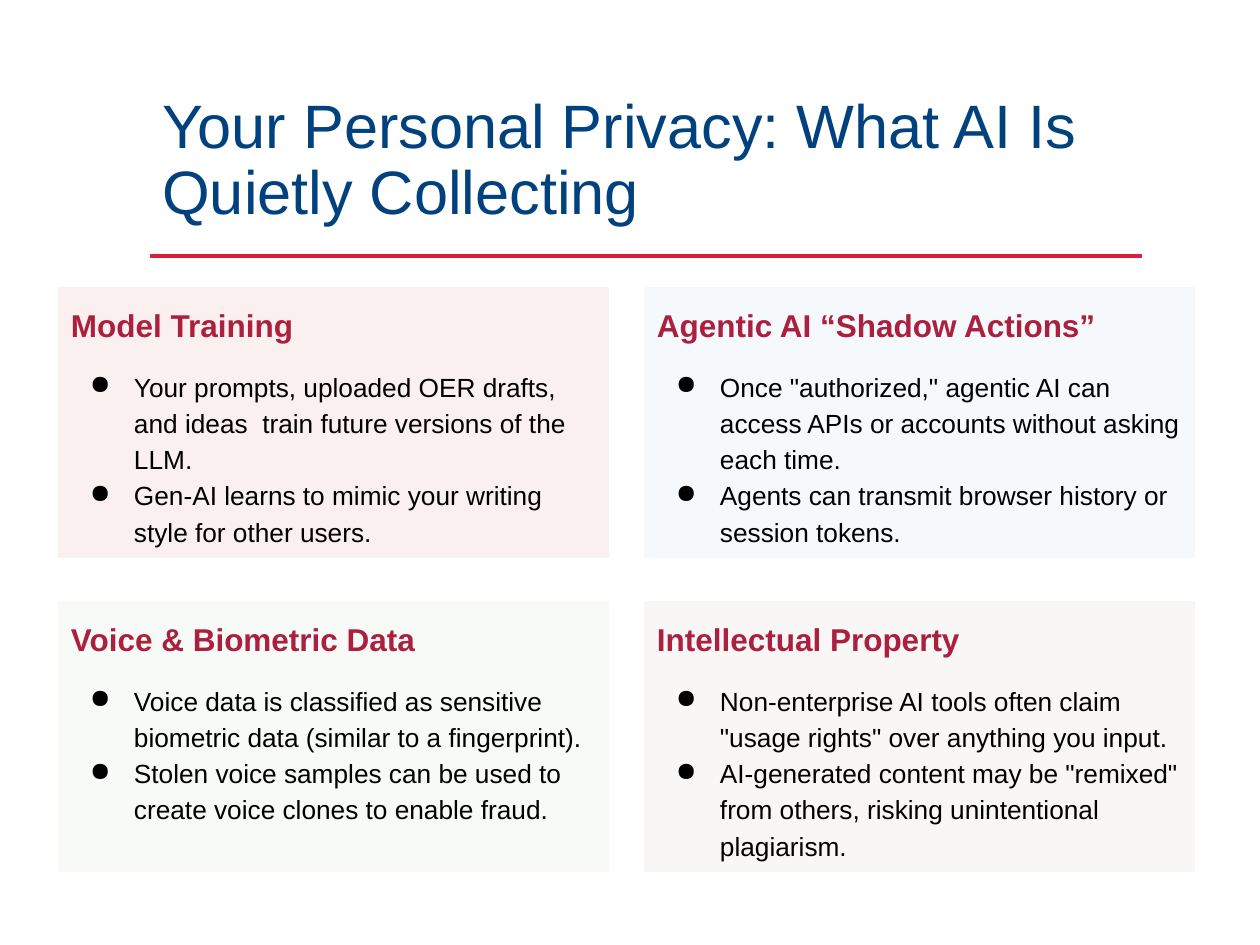
from lxml import etree
from pptx import Presentation
from pptx.dml.color import RGBColor
from pptx.enum.shapes import MSO_CONNECTOR, MSO_SHAPE
from pptx.enum.text import MSO_ANCHOR, PP_ALIGN
from pptx.oxml.ns import qn
from pptx.util import Emu, Pt

STRAIGHT = MSO_CONNECTOR.STRAIGHT
RECTANGLE = MSO_SHAPE.RECTANGLE
TOP, BOTTOM = MSO_ANCHOR.TOP, MSO_ANCHOR.BOTTOM
LEFT = PP_ALIGN.LEFT

NAVY = RGBColor(0x00, 0x41, 0x7E)
RED = RGBColor(0xDE, 0x1F, 0x37)
CRIMSON = RGBColor(0xAB, 0x1F, 0x3F)
BLACK = RGBColor(0x00, 0x00, 0x00)
ROSE = RGBColor(0xE6, 0xB8, 0xAF)
SKY = RGBColor(0xCF, 0xE2, 0xF3)
MINT = RGBColor(0xD9, 0xEA, 0xD3)
SAND = RGBColor(0xDF, 0xDB, 0xD5)

PX_PER_INCH = 126
PANEL_LEFT, PANEL_TOP = 58, 287
PANEL_WIDTH, PANEL_HEIGHT = 551, 271
COLUMN_STEP, ROW_STEP = 586, 314
PANEL_OPACITY = 20
PANEL_INSET = 13
BULLET_INDENT, BULLET_HANG = 63, 44

TITLE_FONT = {"name": "Arial", "size": Pt(35)}
HEADING_FONT = {"name": "Arial", "size": Pt(18), "bold": True}
BODY_FONT = {"name": "Arial", "size": Pt(15), "bold": False}

TITLE = "Your Personal Privacy: What AI Is Quietly Collecting"
PANELS = [
    ("Model Training", ROSE, [
        "Your prompts, uploaded OER drafts, and ideas  train future versions of the LLM.",
        "Gen-AI learns to mimic your writing style for other users.",
    ]),
    ("Agentic AI “Shadow Actions”", SKY, [
        'Once "authorized," agentic AI can access APIs or accounts without asking each time.',
        "Agents can transmit browser history or session tokens.",
    ]),
    ("Voice & Biometric Data", MINT, [
        "Voice data is classified as sensitive biometric data (similar to a fingerprint).",
        "Stolen voice samples can be used to create voice clones to enable fraud.",
    ]),
    ("Intellectual Property", SAND, [
        'Non-enterprise AI tools often claim "usage rights" over anything you input.',
        'AI-generated content may be "remixed" from others, risking unintentional plagiarism.',
    ]),
]


def px(length):
    return Emu(round(length * 914400 / PX_PER_INCH))


def set_attributes(target, values):
    for name, value in values.items():
        setattr(target, name, value)


def write(paragraph, text, font, color, line_spacing):
    set_attributes(paragraph, {"alignment": LEFT, "line_spacing": line_spacing})
    run = paragraph.add_run()
    run.text = text
    set_attributes(run.font, font)
    run.font.color.rgb = color


def add_bullet(paragraph):
    properties = paragraph._p.get_or_add_pPr()
    properties.set("marL", str(px(BULLET_INDENT)))
    properties.set("indent", str(-px(BULLET_HANG)))
    bullet_color = etree.SubElement(properties, qn("a:buClr"))
    etree.SubElement(bullet_color, qn("a:srgbClr"), val=str(BLACK))
    etree.SubElement(properties, qn("a:buChar"), char="●")


def set_opacity(shape, percent):
    color = shape.fill._xPr.find(qn("a:solidFill"))[0]
    etree.SubElement(color, qn("a:alpha"), val=str(percent * 1000))


def add_title(slide):
    title = slide.shapes.add_textbox(px(150), px(98), px(993), px(136))
    frame = title.text_frame
    set_attributes(frame, {"word_wrap": True, "vertical_anchor": BOTTOM})
    write(frame.paragraphs[0], TITLE, TITLE_FONT, NAVY, 0.9)


def add_title_rule(slide):
    rule = slide.shapes.add_connector(STRAIGHT, px(150), px(256), px(1142), px(256))
    rule.line.color.rgb = RED
    rule.line.width = Pt(2.5)
    etree.SubElement(rule._element.spPr, qn("a:effectLst"))


def add_panel(slide, left, top, heading, tint, points):
    panel = slide.shapes.add_shape(
        RECTANGLE, px(left), px(top), px(PANEL_WIDTH), px(PANEL_HEIGHT))
    panel.shadow.inherit = False
    panel.fill.solid()
    panel.fill.fore_color.rgb = tint
    set_opacity(panel, PANEL_OPACITY)
    panel.line.fill.background()

    frame = panel.text_frame
    set_attributes(frame, {"word_wrap": True, "vertical_anchor": TOP})
    sides = ("left", "top", "right", "bottom")
    set_attributes(frame, {f"margin_{side}": px(PANEL_INSET) for side in sides})
    write(frame.paragraphs[0], heading, HEADING_FONT, CRIMSON, 1.15)
    for index, point in enumerate(points):
        paragraph = frame.add_paragraph()
        add_bullet(paragraph)
        paragraph.space_before = Pt(0 if index else 13)
        write(paragraph, point, BODY_FONT, BLACK, 1.15)


def main():
    presentation = Presentation()
    presentation.slide_width = px(1260)
    presentation.slide_height = px(945)
    slide = presentation.slides.add_slide(presentation.slide_layouts[6])
    add_title_rule(slide)
    add_title(slide)
    for index, (heading, tint, points) in enumerate(PANELS):
        row, column = divmod(index, 2)
        add_panel(slide, PANEL_LEFT + column * COLUMN_STEP,
                  PANEL_TOP + row * ROW_STEP, heading, tint, points)
    presentation.save("out.pptx")


if __name__ == "__main__":
    main()
